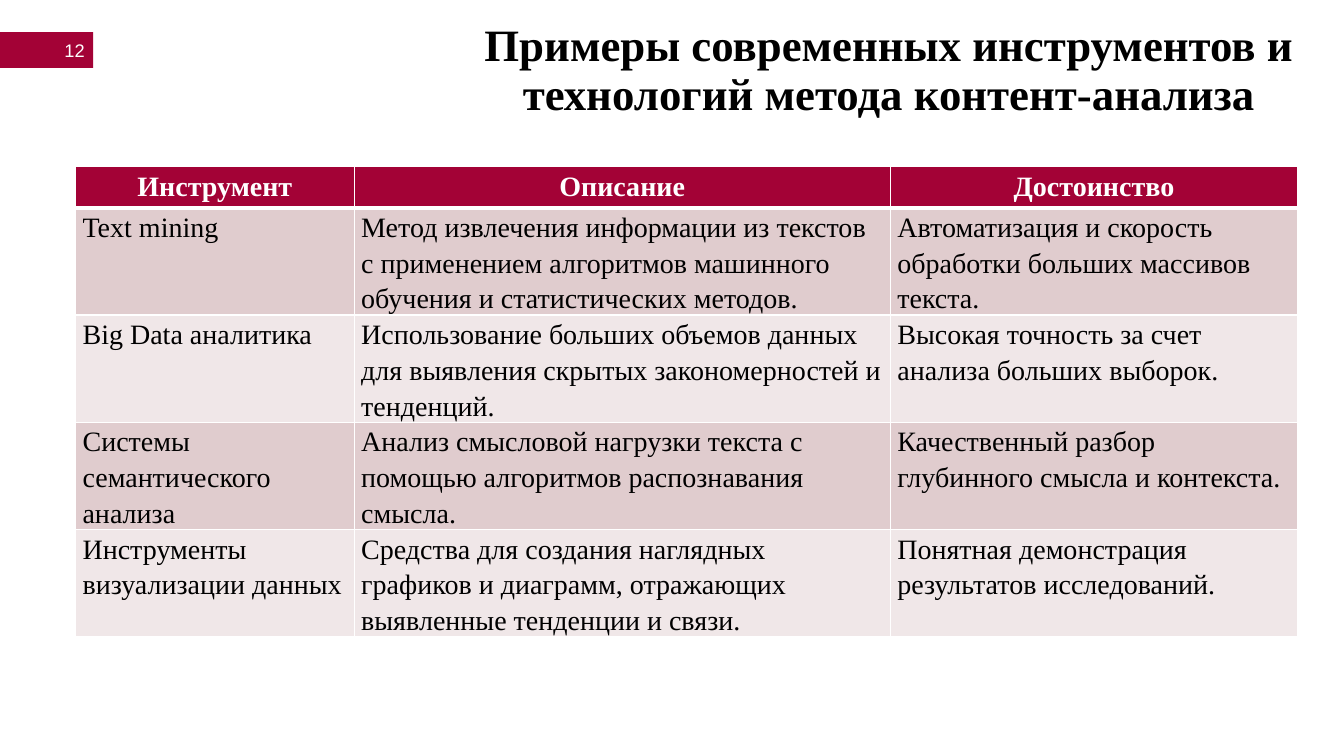
from lxml import etree
from pptx import Presentation
from pptx.dml.color import RGBColor
from pptx.enum.shapes import MSO_SHAPE
from pptx.enum.text import MSO_ANCHOR, MSO_AUTO_SIZE, PP_ALIGN
from pptx.oxml.ns import qn
from pptx.util import Pt

RECT = MSO_SHAPE.RECTANGLE
TOP, MIDDLE = MSO_ANCHOR.TOP, MSO_ANCHOR.MIDDLE
LEFT, CENTER, RIGHT = PP_ALIGN.LEFT, PP_ALIGN.CENTER, PP_ALIGN.RIGHT
NO_FIT = MSO_AUTO_SIZE.NONE

TITLE = "Примеры современных инструментов и технологий метода контент-анализа"
PAGE = "12"
ROWS = [
    ("Инструмент", "Описание", "Достоинство"),
    ("Text mining",
     "Метод извлечения информации из текстов с применением алгоритмов машинного обучения и статистических методов.",
     "Автоматизация и скорость обработки больших массивов текста."),
    ("Big Data аналитика",
     "Использование больших объемов данных для выявления скрытых закономерностей и тенденций.",
     "Высокая точность за счет анализа больших выборок."),
    ("Системы семантического анализа",
     "Анализ смысловой нагрузки текста с помощью алгоритмов распознавания смысла.",
     "Качественный разбор глубинного смысла и контекста."),
    ("Инструменты визуализации данных",
     "Средства для создания наглядных графиков и диаграмм, отражающих выявленные тенденции и связи.",
     "Понятная демонстрация результатов исследований."),
]
COLORS = {"accent": "A30236", "dark": "E0CCCE", "light": "F0E7E8",
          "white": "FFFFFF", "black": "000000"}
SERIF, SANS = "Times New Roman", "Arial"
COL_WIDTHS = [199, 383, 291]
HEAD_HEIGHT, BODY_HEIGHT = 29.5, 76.5
TABLE_LEFT, TABLE_TOP = 54, 119


def rgb(name):
    return RGBColor.from_string(COLORS[name])


def set_attrs(obj, values):
    for name, value in values.items():
        setattr(obj, name, value)


def write(tf, text, color, font, para):
    p = tf.paragraphs[0]
    set_attrs(p, para)
    r = p.add_run()
    r.text = text
    set_attrs(r.font, font)
    r.font.color.rgb = rgb(color)


def add_borders(cell, widths):
    tc_pr = cell._tc.get_or_add_tcPr()
    for side, width in widths.items():
        ln = etree.SubElement(tc_pr, qn("a:ln" + side), w=str(Pt(width)))
        fill = etree.SubElement(ln, qn("a:solidFill"))
        etree.SubElement(fill, qn("a:srgbClr"), val=COLORS["white"])


prs = Presentation()
set_attrs(prs, {"slide_width": Pt(960), "slide_height": Pt(540)})
s = prs.slides.add_slide(prs.slide_layouts[5])

badge = s.shapes.add_shape(RECT, Pt(0), Pt(23), Pt(66.5), Pt(25.5))
badge.shadow.inherit = False
badge.fill.solid()
badge.fill.fore_color.rgb = rgb("accent")
badge.line.fill.background()
set_attrs(badge.text_frame, {"margin_right": Pt(6), "vertical_anchor": MIDDLE})
write(badge.text_frame, PAGE, "white", {"name": SANS, "size": Pt(13)}, {"alignment": RIGHT})

title = s.shapes.title
set_attrs(title, {"left": Pt(341.5), "top": Pt(16.5), "width": Pt(587), "height": Pt(62)})
set_attrs(title.text_frame, {
    "margin_left": 0, "margin_right": 0, "margin_top": 0, "margin_bottom": 0,
    "vertical_anchor": TOP, "word_wrap": True, "auto_size": NO_FIT})
write(title.text_frame, TITLE, "black", {"name": SERIF, "size": Pt(32), "bold": True},
      {"alignment": CENTER, "line_spacing": 0.9, "space_before": Pt(0), "space_after": Pt(12)})

heights = [HEAD_HEIGHT] + [BODY_HEIGHT] * (len(ROWS) - 1)
table = s.shapes.add_table(len(ROWS), len(COL_WIDTHS), Pt(TABLE_LEFT), Pt(TABLE_TOP),
                           Pt(sum(COL_WIDTHS)), Pt(sum(heights))).table
for column, width in zip(table.columns, COL_WIDTHS):
    column.width = Pt(width)
for i, (texts, height) in enumerate(zip(ROWS, heights)):
    table.rows[i].height = Pt(height)
    head = i == 0
    fill = "accent" if head else ("dark" if i % 2 else "light")
    widths = {"L": 1, "R": 1, "T": 3 if i == 1 else 1, "B": 3 if head else 1}
    for j, text in enumerate(texts):
        cell = table.cell(i, j)
        add_borders(cell, widths)
        cell.fill.solid()
        cell.fill.fore_color.rgb = rgb(fill)
        set_attrs(cell, {"margin_left": Pt(5), "margin_right": Pt(5),
                         "margin_top": 0, "margin_bottom": 0, "vertical_anchor": TOP})
        write(cell.text_frame, text, "white" if head else "black",
              {"name": SERIF, "size": Pt(20), "bold": head},
              {"alignment": CENTER if head else LEFT, "line_spacing": 1.15})

prs.save("out.pptx")
